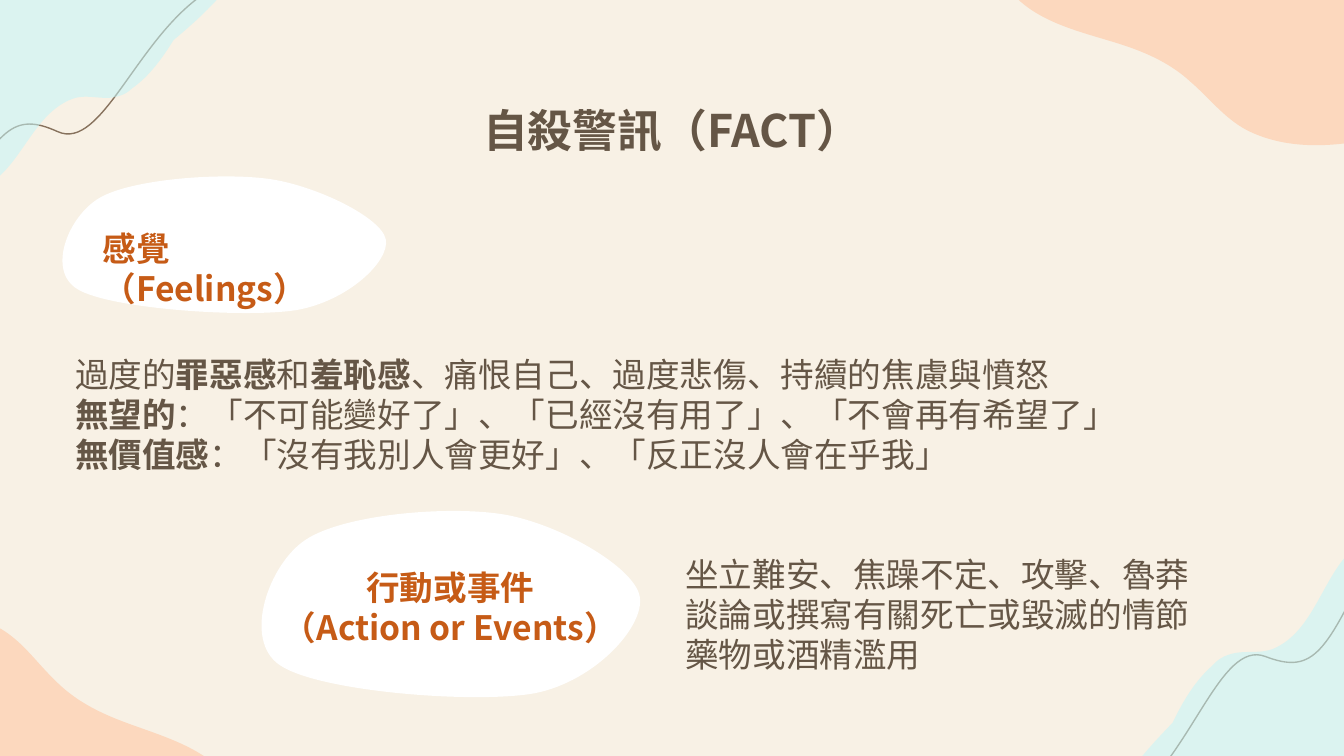
from dataclasses import dataclass
from math import cos, radians, sin

from lxml import etree
from pptx import Presentation
from pptx.dml.color import RGBColor
from pptx.enum.text import MSO_ANCHOR, MSO_AUTO_SIZE, PP_ALIGN
from pptx.oxml.ns import qn
from pptx.util import Cm, Pt

LEFT, MID = PP_ALIGN.LEFT, PP_ALIGN.CENTER
TOP, FIXED = MSO_ANCHOR.TOP, MSO_AUTO_SIZE.NONE


@dataclass(frozen=True)
class Theme:
    """Colours, type sizes and font of the deck."""
    paper: str = "F8F1E5"
    ink: str = "655646"
    accent: str = "C65B16"
    white: str = "FFFFFF"
    line: str = "87725D"
    mint: str = "C4F6FA"
    peach: str = "FFCAA8"
    font: str = "Noto Sans CJK TC"
    head: int = 24
    text: int = 18
    pitch: float = 1.19


@dataclass(frozen=True)
class Outline:
    """Start point and cubic curves inside a nominal size."""
    size: tuple
    dots: tuple
    closed: bool = True


THEME = Theme()

WAVE = Outline((277, 237), (
    (291, 20), (291, 20), (228, 20), (176, 53), (124, 86), (98, 172),
    (65, 157), (32, 142), (21, 155), (-14, 219)), False)

CLOUD = Outline((292, 261), (
    (243, 0), (234, 0), (225, 2), (217, 8), (194, 25), (185, 61), (156, 70),
    (148, 72), (141, 70), (133, 70),
    (126, 70), (119, 72), (114, 77), (101, 86), (91, 100), (83, 113),
    (65, 128), (49, 143), (36, 161), (20, 180), (0, 207), (12, 232),
    (21, 253), (42, 261), (63, 261), (68, 261), (72, 260), (77, 260),
    (107, 255), (134, 238), (158, 221), (181, 206), (202, 189), (219, 168),
    (227, 158), (234, 146), (239, 134), (245, 119), (250, 103), (259, 89),
    (273, 69), (292, 41), (275, 16), (267, 5), (255, 0), (243, 0)))

DUNE = Outline((348, 287), (
    (346, 113), (312, 79), (250, 80), (204, 85), (186, 87), (168, 88),
    (151, 87), (131, 87), (112, 82), (93, 78), (62, 72), (25, 66), (-3, 83),
    (-27, 98), (-37, 129), (-19, 153), (-17, 155), (-15, 157), (-13, 159),
    (8, 180), (41, 186), (68, 195), (86, 201), (103, 209), (117, 222),
    (131, 234), (142, 249), (159, 258), (185, 271), (215, 271), (243, 266),
    (278, 259), (318, 245), (344, 219), (361, 203), (370, 179), (367, 157),
    (368, 155), (368, 153), (367, 151), (363, 135), (356, 122), (346, 113)))

STONE = Outline((282, 139), (
    (33, 22), (6, 40), (-14, 96), (14, 115), (43, 135), (160, 144),
    (204, 136), (249, 127), (286, 86), (282, 64), (278, 42), (222, 10),
    (181, 3), (139, -4), (61, 3), (33, 22)))


def color(code):
    """Turn a hex code into a colour."""
    return RGBColor.from_string(code)


def bend(shape):
    """Join each three line segments of a freeform into one cubic curve."""
    track = shape._element.find(".//" + qn("a:path"))
    lines = track.findall(qn("a:lnTo"))
    for i in range(0, len(lines), 3):
        curve = etree.Element(qn("a:cubicBezTo"))
        lines[i].addprevious(curve)
        for line in lines[i:i + 3]:
            curve.append(line[0])
            track.remove(line)


def draw(slide, box, outline, turn=0, fill=None, alpha=100):
    """Draw an outline stretched to a box and turned about its centre."""
    x, y, w, h = box
    c, s = cos(radians(turn)), sin(radians(turn))
    spots = []
    for px, py in outline.dots:
        dx = (px / outline.size[0] - 0.5) * w
        dy = (py / outline.size[1] - 0.5) * h
        spots.append((Cm(x + w / 2 + dx * c - dy * s),
                      Cm(y + h / 2 + dx * s + dy * c)))
    pen = slide.shapes.build_freeform(*spots[0])
    pen.add_line_segments(spots[1:], close=outline.closed)
    shape = pen.convert_to_shape()
    bend(shape)
    shape.shadow.inherit = False
    if fill is None:
        shape.fill.background()
        shape.line.color.rgb = color(THEME.line)
        shape.line.width = Pt(0.75)
        return
    shape.line.fill.background()
    shape.fill.solid()
    shape.fill.fore_color.rgb = color(fill)
    if alpha < 100:
        tint = shape._element.spPr.find(".//" + qn("a:srgbClr"))
        etree.SubElement(tint, qn("a:alpha"), val=str(alpha * 1000))


def write(shape, box, lines, size=THEME.text, ink=THEME.ink, align=LEFT, top=0.21):
    """Place a text shape and fill it; asterisks switch bold."""
    shape.left, shape.top, shape.width, shape.height = map(Cm, box)
    frame = shape.text_frame
    frame.word_wrap, frame.auto_size = True, FIXED
    frame.vertical_anchor = TOP
    frame.margin_left = frame.margin_right = Cm(0.25)
    frame.margin_top, frame.margin_bottom = Cm(top), Cm(0.13)
    for i, line in enumerate(lines):
        para = frame.add_paragraph() if i else frame.paragraphs[0]
        para.alignment = align
        para.line_spacing = Pt(size * THEME.pitch)
        para.space_before = para.space_after = Pt(0)
        prop = para._p.get_or_add_pPr()
        prop.set("marL", "0")
        prop.set("indent", "0")
        etree.SubElement(prop, qn("a:buNone"))
        for n, part in enumerate(line.split("*")):
            if part:
                run = para.add_run()
                run.text = part
                font = run.font
                font.name, font.size, font.bold = THEME.font, Pt(size), n % 2 == 1
                font.color.rgb = color(ink)
                etree.SubElement(font._element, qn("a:ea"), typeface=THEME.font)


def decor(slide, box):
    """Dress opposite corners of the page box."""
    x, y, w, h = box
    draw(slide, (x - 0.56, y - 1.5, 7.04, 6.02), WAVE)
    draw(slide, (x + w - 6.81, y + h - 3.8, 7.04, 6.02), WAVE, 176.5)
    draw(slide, (x + w - 5.51, y + h - 3.95, 8.13, 7.26), CLOUD, 354.1, THEME.mint, 54)
    draw(slide, (x - 2.03, y - 3, 7.42, 6.63), CLOUD, 180, THEME.mint, 54)
    draw(slide, (x + w - 5.87, y - 4.09, 8.84, 7.29), DUNE, 0, THEME.peach, 64)
    draw(slide, (x - 4.93, y + h - 3.16, 8.84, 7.29), DUNE, 183, THEME.peach, 64)


def badge(slide, box, lines, inset, align=LEFT):
    """Draw a white stone with an accent label inside."""
    x, y, w, h = box
    dx, dy, high = inset
    draw(slide, box, STONE, fill=THEME.white)
    label = slide.shapes.add_textbox(0, 0, 0, 0)
    write(label, (x + dx, y + dy, w - 2 * dx, high), lines, ink=THEME.accent, align=align)


def main():
    """Build and save the slide."""
    deck = Presentation()
    deck.slide_width, deck.slide_height = Cm(25.4), Cm(14.29)
    slide = deck.slides.add_slide(deck.slide_layouts[3])
    slide.background.fill.solid()
    slide.background.fill.fore_color.rgb = color(THEME.paper)
    title, feel, act = slide.placeholders
    decor(slide, (0, 0, 25.4, 14.29))
    write(title, (1.98, 1.6, 21.44, 1.3), ["*自殺警訊（FACT）*"],
          size=THEME.head, align=MID, top=0.35)
    badge(slide, (1.17, 3.33, 6.12, 2.59), ["*感覺（Feelings）*"], (0.52, 0.78, 1.02))
    write(feel, (1.17, 6.48, 21.03, 2.57), [
        "過度的*罪惡感*和*羞恥感*、痛恨自己、過度悲傷、持續的焦慮與憤怒",
        "*無望的*：「不可能變好了」、「已經沒有用了」、「不會再有希望了」",
        "*無價值感*：「沒有我別人會更好」、「反正沒人會在乎我」"])
    badge(slide, (4.93, 9.65, 7.16, 3.53),
          ["*行動或事件*", "*（Action or Events）*"], (0, 0.87, 1.8), MID)
    write(act, (12.7, 10.26, 12.4, 2.57), [
        "坐立難安、焦躁不定、攻擊、魯莽",
        "談論或撰寫有關死亡或毀滅的情節",
        "藥物或酒精濫用"])
    deck.save("out.pptx")


if __name__ == "__main__":
    main()
